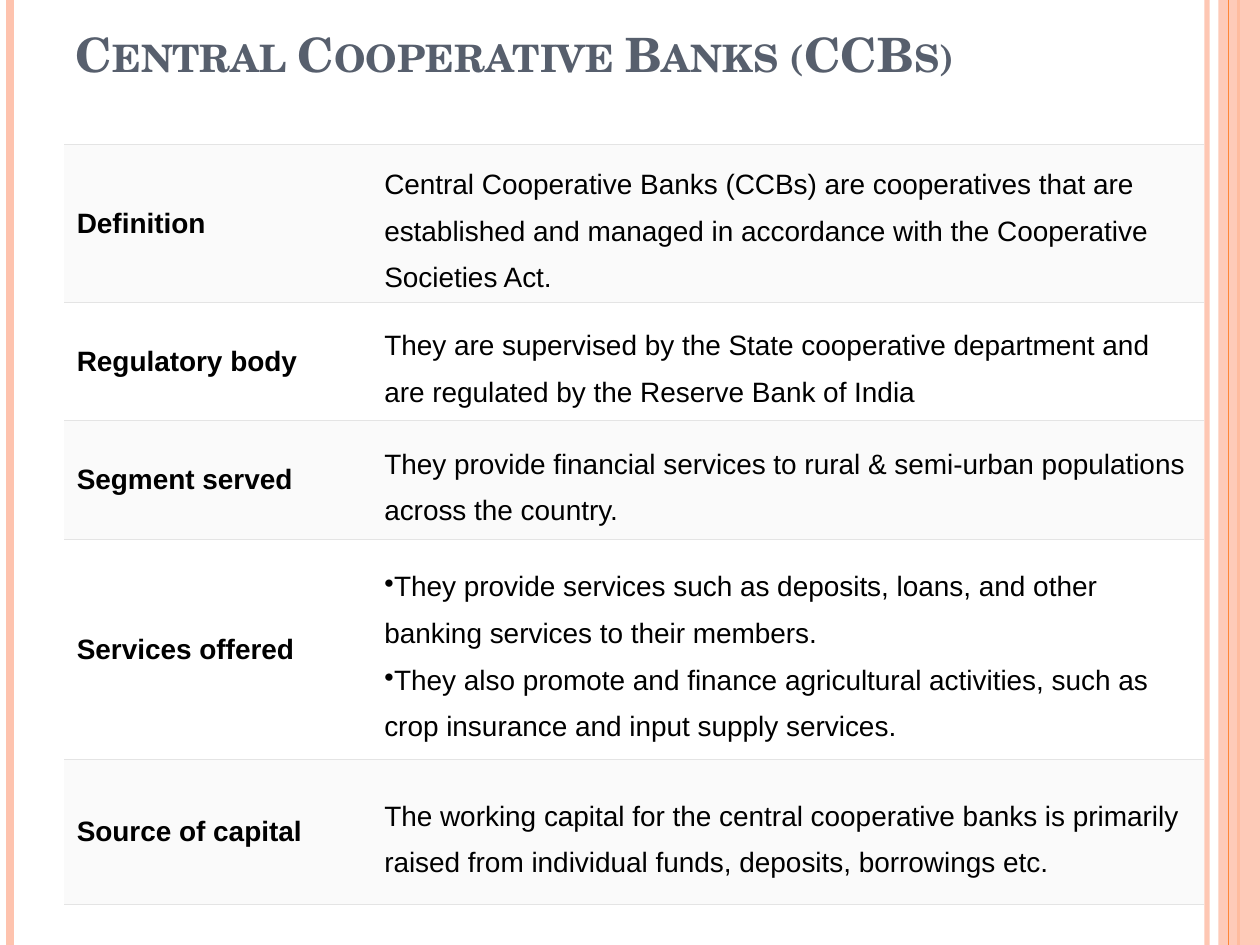
from lxml.etree import SubElement
from pptx import Presentation
from pptx.dml.color import RGBColor
from pptx.enum.shapes import MSO_CONNECTOR as Connector, MSO_SHAPE as Shape
from pptx.enum.text import MSO_ANCHOR as Anchor, MSO_AUTO_SIZE as AutoSize, PP_ALIGN as Align
from pptx.oxml.ns import qn
from pptx.util import Inches, Pt

WIDTH, HEIGHT = 10, 7.5
COLORS = {
    "peach": "FEC3AE",
    "orange": "FE8637",
    "title": "575F6D",
    "text": "000000",
    "rule": "E4E4E4",
    "band": "FAFAFA",
    "plain": "FFFFFF",
}
COLUMNS = [2.44, 6.61]
ROWS = [
    (1.15, "Definition", [
        "Central Cooperative Banks (CCBs) are cooperatives that are established "
        "and managed in accordance with the Cooperative Societies Act."]),
    (0.94, "Regulatory body", [
        "They are supervised by the State cooperative department and are "
        "regulated by the Reserve Bank of India"]),
    (0.94, "Segment served", [
        "They provide financial services to rural & semi-urban populations "
        "across the country."]),
    (1.75, "Services offered", [
        "They provide services such as deposits, loans, and other banking "
        "services to their members.",
        "They also promote and finance agricultural activities, such as crop "
        "insurance and input supply services."]),
    (1.15, "Source of capital", [
        "The working capital for the central cooperative banks is primarily "
        "raised from individual funds, deposits, borrowings etc."]),
]


def color(name):
    return RGBColor.from_string(COLORS[name])


def write(para, text, size=16, font="Arial", ink="text", bold=False,
          small_caps=False, spacing=None, bullet=False):
    para.alignment = Align.LEFT
    if spacing:
        para.line_spacing = spacing
    if bullet:
        props = para._p.get_or_add_pPr()
        props.set("marL", "0")
        props.set("indent", "0")
        SubElement(props, qn("a:buChar"), char="•")
    span = para.add_run()
    span.text = text
    span.font.size = Pt(size)
    span.font.name = font
    span.font.bold = bold
    span.font.color.rgb = color(ink)
    if small_caps:
        span._r.get_or_add_rPr().set("cap", "small")


def set_opacity(element, percent):
    for tint in element.iter(qn("a:srgbClr")):
        SubElement(tint, qn("a:alpha"), val=str(percent * 1000))


def add_vertical_rule(page, x, ink, weight, opacity=100):
    rule = page.shapes.add_connector(
        Connector.STRAIGHT, Inches(x), 0, Inches(x), Inches(HEIGHT))
    rule.line.color.rgb = color(ink)
    rule.line.width = Pt(weight)
    if opacity < 100:
        set_opacity(rule._element.spPr, opacity)
    SubElement(rule._element.spPr, qn("a:effectLst"))


def add_side_band(page, x, ink, opacity):
    band = page.shapes.add_shape(
        Shape.RECTANGLE, Inches(x), 0, Inches(WIDTH - x), Inches(HEIGHT))
    band.shadow.inherit = False
    band.fill.solid()
    band.fill.fore_color.rgb = color(ink)
    band.line.fill.background()
    set_opacity(band._element.spPr, opacity)


def add_title(page, text):
    box = page.shapes.title
    box.left, box.top = Inches(0.5), Inches(0.3)
    box.width, box.height = Inches(8.75), Inches(0.85)
    frame = box.text_frame
    frame.auto_size = AutoSize.NONE
    frame.word_wrap = True
    frame.vertical_anchor = Anchor.BOTTOM
    frame.margin_bottom = Inches(0.5)
    write(frame.paragraphs[0], text, size=27, font="TeX Gyre Schola",
          ink="title", bold=True, small_caps=True)


def set_borders(cell):
    props = cell._tc.get_or_add_tcPr()
    for side in ("lnL", "lnR"):
        SubElement(SubElement(props, qn(f"a:{side}"), w="0"), qn("a:noFill"))
    for side in ("lnT", "lnB"):
        line = SubElement(props, qn(f"a:{side}"), w=str(Pt(0.75)))
        fill = SubElement(line, qn("a:solidFill"))
        SubElement(fill, qn("a:srgbClr"), val=COLORS["rule"])


def fill_cell(cell, texts, background, **style):
    set_borders(cell)
    cell.fill.solid()
    cell.fill.fore_color.rgb = color(background)
    cell.vertical_anchor = Anchor.MIDDLE
    cell.margin_left = cell.margin_right = Inches(0.1)
    cell.margin_top = cell.margin_bottom = Inches(0.07)
    frame = cell.text_frame
    for index, text in enumerate(texts):
        para = frame.add_paragraph() if index else frame.paragraphs[0]
        write(para, text, bullet=len(texts) > 1, **style)


def add_facts_table(page):
    heights = [height for height, _, _ in ROWS]
    table = page.shapes.add_table(
        len(ROWS), len(COLUMNS), Inches(0.51), Inches(1.15),
        Inches(sum(COLUMNS)), Inches(sum(heights))).table
    table.first_row = table.horz_banding = False
    for column, width in zip(table.columns, COLUMNS):
        column.width = Inches(width)
    for index, (height, label, texts) in enumerate(ROWS):
        table.rows[index].height = Inches(height)
        background = "plain" if index % 2 else "band"
        fill_cell(table.cell(index, 0), [label], background, bold=True)
        fill_cell(table.cell(index, 1), texts, background, spacing=1.5)


def main():
    deck = Presentation()
    deck.slide_width, deck.slide_height = Inches(WIDTH), Inches(HEIGHT)
    page = deck.slides.add_slide(deck.slide_layouts[5])
    add_vertical_rule(page, 9.58, "peach", 3, opacity=93)
    add_vertical_rule(page, 0.08, "peach", 4.5)
    add_vertical_rule(page, 9.83, "orange", 1.5)
    add_side_band(page, 9.67, "peach", opacity=87)
    add_vertical_rule(page, 9.75, "orange", 0.75)
    add_title(page, "Central Cooperative Banks (CCBs)")
    add_facts_table(page)
    deck.save("out.pptx")


if __name__ == "__main__":
    main()
